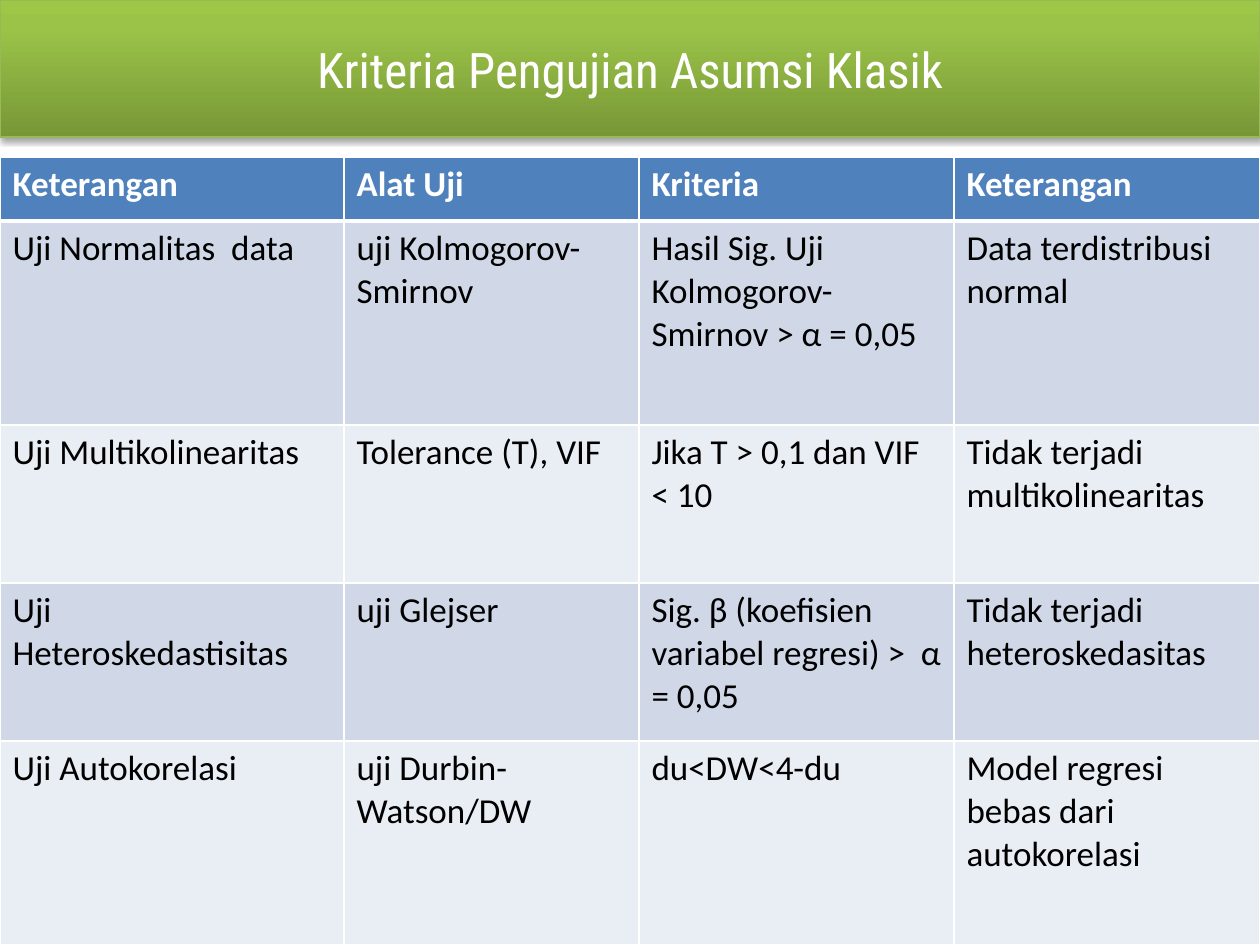
from lxml import etree
from pptx import Presentation, util as u
from pptx.dml.color import RGBColor
from pptx.enum import text
from pptx.oxml import parse_xml
from pptx.oxml.ns import nsdecls, qn

PX = 914400 / 126
WIDTH, HEIGHT = 1260, 945
INK = {"white": "FFFFFF", "black": "000000", "head": "4F81BD",
       "odd": "D0D8E8", "even": "E9EDF4", "edge": "98B955",
       "dark": "779737", "mid": "9BC348", "light": "9DC746"}
COLS = [344, 295, 315, 306]
ROWS = [64, 204, 158, 158, 204]
TESTS = [
    ["Keterangan", "Alat Uji", "Kriteria", "Keterangan"],
    ["Uji Normalitas  data", "uji Kolmogorov-Smirnov",
     "Hasil Sig. Uji Kolmogorov-Smirnov > α = 0,05",
     "Data terdistribusi  normal"],
    ["Uji Multikolinearitas", "Tolerance (T), VIF",
     "Jika T > 0,1 dan VIF < 10", "Tidak terjadi multikolinearitas"],
    ["Uji Heteroskedastisitas", "uji Glejser",
     "Sig. β (koefisien variabel regresi) >  α = 0,05",
     "Tidak terjadi heteroskedasitas"],
    ["Uji Autokorelasi", "uji Durbin-Watson/DW", "du<DW<4-du",
     "Model regresi bebas dari autokorelasi"],
]


def px(n):
    return u.Emu(round(n * PX))


def color(name):
    return RGBColor.from_string(INK[name])


def style(para, font, size, ink, bold=False):
    for run in para.runs:
        face = run.font
        face.name, face.size, face.bold = font, u.Pt(size), bold
        face.color.rgb = color(ink)


def shade(shape, stops):
    """Fill from bottom to top with (percent, colour) stops."""
    shape.fill.gradient()
    shape.fill.gradient_angle = 90
    track = shape.element.spPr.find(qn("a:gradFill")).find(qn("a:gsLst"))
    for stop in list(track):
        track.remove(stop)
    for pos, ink in stops:
        stop = etree.SubElement(track, qn("a:gs"), pos=str(pos * 1000))
        etree.SubElement(stop, qn("a:srgbClr"), val=INK[ink])


def drop_shadow(shape):
    shape.element.spPr.append(parse_xml(
        f'<a:effectLst {nsdecls("a")}><a:outerShdw blurRad="40000" '
        'dist="23000" dir="5400000" rotWithShape="0">'
        f'<a:srgbClr val="{INK["black"]}"><a:alpha val="35000"/></a:srgbClr>'
        '</a:outerShdw></a:effectLst>'))


def add_title(slide, words):
    title = slide.shapes.title
    title.left, title.top = px(0), px(0)
    title.width, title.height = px(WIDTH), px(137)
    shade(title, [(0, "dark"), (80, "mid"), (100, "light")])
    title.line.color.rgb = color("edge")
    title.line.width = u.Pt(0.75)
    drop_shadow(title)
    frame = title.text_frame
    frame.text = words
    frame.auto_size = text.MSO_AUTO_SIZE.NONE
    frame.vertical_anchor = text.MSO_ANCHOR.MIDDLE
    para = frame.paragraphs[0]
    para.alignment = text.PP_ALIGN.CENTER
    style(para, "Roboto Condensed", 28, "white")


def add_edges(cell, **widths):
    props = cell._tc.get_or_add_tcPr()
    for side in "LRTB":
        width = u.Pt(widths.get(side, 1))
        props.append(parse_xml(
            f'<a:ln{side} {nsdecls("a")} w="{width}"><a:solidFill>'
            f'<a:srgbClr val="{INK["white"]}"/></a:solidFill></a:ln{side}>'))


def fill_cell(cell, words, row):
    cell.text = words
    head = row == 0
    add_edges(cell, T=3 if row == 1 else 1, B=3 if head else 1)
    cell.fill.solid()
    cell.fill.fore_color.rgb = color(
        "head" if head else "odd" if row % 2 else "even")
    style(cell.text_frame.paragraphs[0], "Calibri", 20,
          "white" if head else "black", head)


def add_grid(slide):
    table = slide.shapes.add_table(
        len(ROWS), len(COLS), px(0), px(157),
        px(sum(COLS)), px(sum(ROWS))).table
    for col, width in zip(table.columns, COLS):
        col.width = px(width)
    for r, (height, test) in enumerate(zip(ROWS, TESTS)):
        table.rows[r].height = px(height)
        for c, words in enumerate(test):
            fill_cell(table.cell(r, c), words, r)


def main():
    deck = Presentation()
    deck.slide_width, deck.slide_height = px(WIDTH), px(HEIGHT)
    slide = deck.slides.add_slide(deck.slide_layouts[5])
    add_title(slide, "Kriteria Pengujian Asumsi Klasik")
    add_grid(slide)
    deck.save("out.pptx")


if __name__ == "__main__":
    main()
